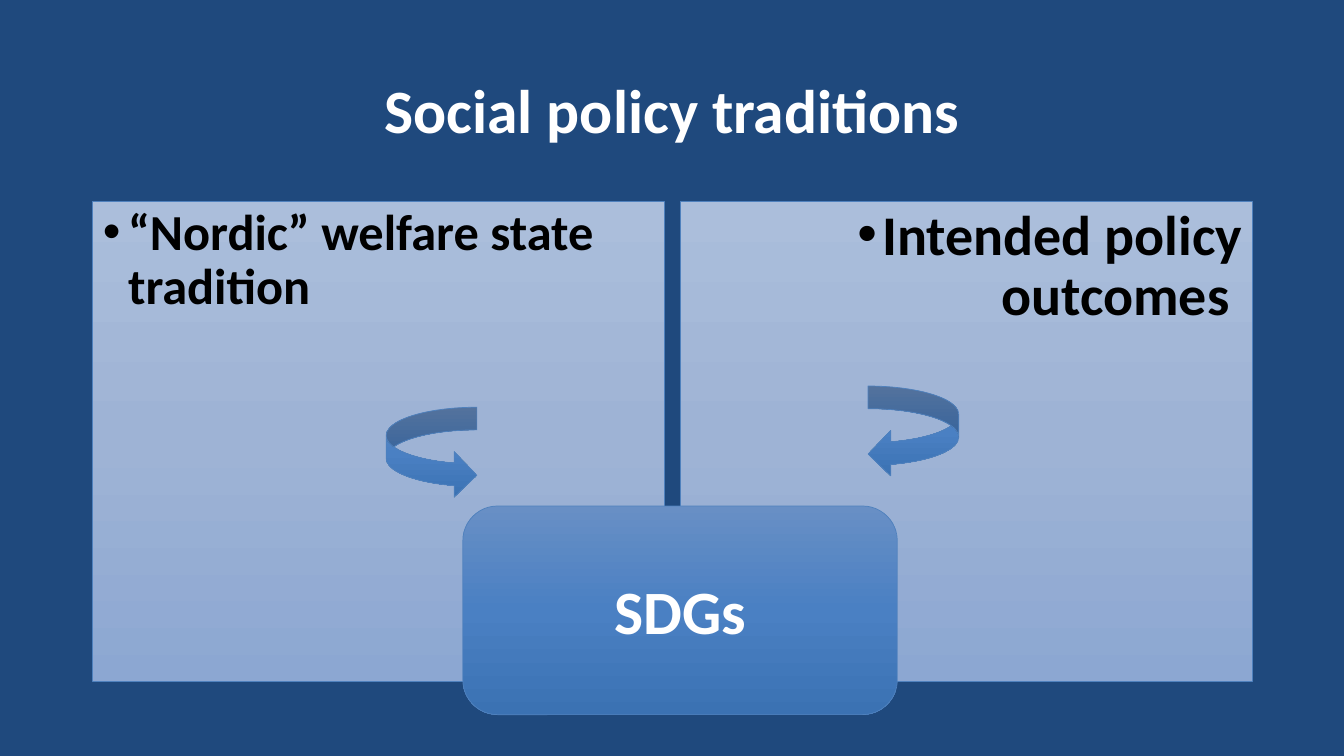
import copy

import lxml.etree
import pptx
import pptx.dml.color
import pptx.enum.shapes
import pptx.enum.text
import pptx.oxml.ns
import pptx.util

Inches = pptx.util.Inches
Pt = pptx.util.Pt
RGBColor = pptx.dml.color.RGBColor
ALIGN = pptx.enum.text.PP_ALIGN
ANCHOR = pptx.enum.text.MSO_ANCHOR
SHAPE = pptx.enum.shapes.MSO_SHAPE

NAVY = RGBColor(0x1F, 0x49, 0x7D)
OUTLINE = RGBColor(0x4F, 0x81, 0xBD)
WHITE = RGBColor(0xFF, 0xFF, 0xFF)
BLACK = RGBColor(0x00, 0x00, 0x00)
PALE = [RGBColor(0xAB, 0xBE, 0xDB), RGBColor(0x9E, 0xB3, 0xD5), RGBColor(0x8C, 0xA7, 0xD2)]
STRONG = [RGBColor(0x68, 0x8F, 0xC5), RGBColor(0x4A, 0x80, 0xC3), RGBColor(0x3B, 0x72, 0xB3)]


def paint(shape, colors):
    """Fill top to bottom with three colours and add a thin outline."""
    shape.fill.gradient()
    shape.fill.gradient_angle = 270
    stop_list = shape.element.spPr.find(".//" + pptx.oxml.ns.qn("a:gsLst"))
    stop_list.append(copy.deepcopy(stop_list[0]))
    for stop, position, color in zip(shape.fill.gradient_stops, (0, 0.5, 1), colors):
        stop.position = position
        stop.color.rgb = color
    shape.line.color.rgb = OUTLINE
    shape.line.width = Pt(0.5)


def write(shape, text, size, color, align, anchor):
    """Set one bold paragraph and return it."""
    frame = shape.text_frame
    frame.text = text
    frame.word_wrap = True
    frame.auto_size = pptx.enum.text.MSO_AUTO_SIZE.NONE
    frame.vertical_anchor = anchor
    para = frame.paragraphs[0]
    para.alignment = align
    font = para.runs[0].font
    font.name = "Calibri"
    font.size = Pt(size)
    font.bold = True
    font.color.rgb = color
    return para


# Page
deck = pptx.Presentation()
deck.slide_width = Inches(13.33)
deck.slide_height = Inches(7.5)
page = deck.slides.add_slide(deck.slide_layouts[3])
page.background.fill.solid()
page.background.fill.fore_color.rgb = NAVY

# Title
title = page.shapes.title
title.left, title.top, title.width, title.height = map(Inches, (0.92, 0.4, 11.5, 1.45))
para = write(title, "Social policy traditions", 44, WHITE, ALIGN.CENTER, ANCHOR.MIDDLE)
para.line_spacing = 0.9

# Two panels with one bullet each
panels = [
    (1, 0.92, "“Nordic” welfare state tradition", 36, ALIGN.LEFT),
    (2, 6.75, "Intended policy outcomes ", 40, ALIGN.RIGHT),
]
for index, left, text, size, align in panels:
    panel = page.placeholders[index]
    panel.left, panel.top, panel.width, panel.height = map(Inches, (left, 2, 5.67, 4.76))
    paint(panel, PALE)
    para = write(panel, text, size, BLACK, align, ANCHOR.TOP)
    para.line_spacing = 0.9
    para.space_before = Pt(10)
    properties = para._p.get_or_add_pPr()
    properties.set("marL", str(Inches(0.25)))
    properties.set("indent", str(-Inches(0.25)))
    for tag, name, value in (("a:buFont", "typeface", "Arial"), ("a:buChar", "char", "•")):
        bullet = lxml.etree.SubElement(properties, pptx.oxml.ns.qn(tag))
        bullet.set(name, value)

# Goals box and the two arrows leading to it
blocks = [
    (SHAPE.ROUNDED_RECTANGLE, 4.59, 5.02, 4.31, 2.07, "SDGs"),
    (SHAPE.CURVED_RIGHT_ARROW, 3.83, 4.04, 0.9, 0.9, ""),
    (SHAPE.CURVED_LEFT_ARROW, 8.61, 3.83, 0.9, 0.9, ""),
]
for kind, left, top, width, height, text in blocks:
    block = page.shapes.add_shape(kind, Inches(left), Inches(top), Inches(width), Inches(height))
    block.shadow.inherit = False
    paint(block, STRONG)
    if text:
        write(block, text, 44, WHITE, ALIGN.CENTER, ANCHOR.MIDDLE)

deck.save("out.pptx")
